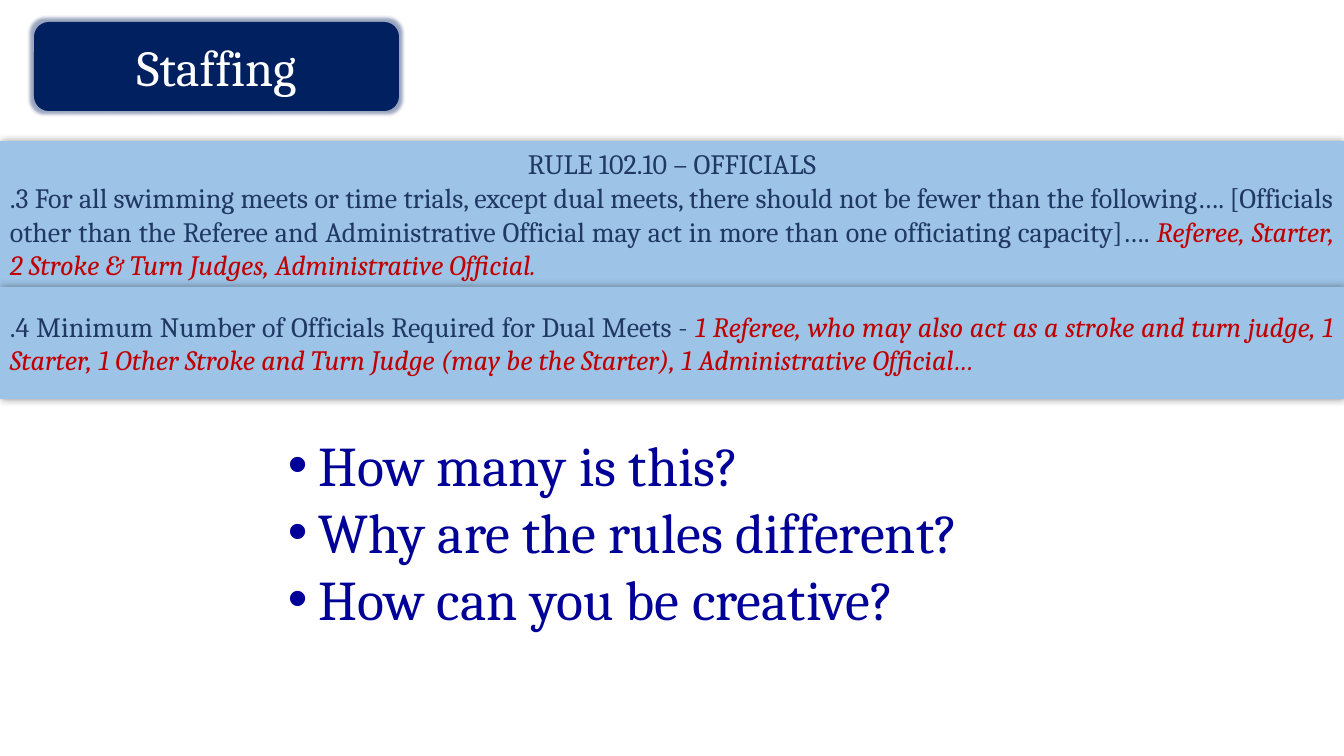
from lxml import etree
from pptx import Presentation
from pptx.dml.color import RGBColor
from pptx.enum.shapes import MSO_SHAPE
from pptx.enum.text import MSO_ANCHOR, MSO_AUTO_SIZE, PP_ALIGN
from pptx.oxml.ns import qn
from pptx.util import Emu, Pt

RECT, ROUND = MSO_SHAPE.RECTANGLE, MSO_SHAPE.ROUNDED_RECTANGLE
LEFT, CENTER, JUSTIFY = PP_ALIGN.LEFT, PP_ALIGN.CENTER, PP_ALIGN.JUSTIFY
MIDDLE, FIXED = MSO_ANCHOR.MIDDLE, MSO_AUTO_SIZE.NONE
PX = 914400 / 100.8
NAVY, BLUE, INK, RED = "002060", "9DC3E6", "203864", "C00000"


def px(*vals):
    return [Emu(round(v * PX)) for v in vals]


def write(shape, paras, size, color, bullet=False):
    """Fill a shape with (align, text, red italic text) paragraphs."""
    frame = shape.text_frame
    frame.word_wrap = True
    frame.auto_size = FIXED
    frame.vertical_anchor = MIDDLE
    for i, (align, *parts) in enumerate(paras):
        para = frame.add_paragraph() if i else frame.paragraphs[0]
        para.alignment = align
        if bullet:
            props = para._p.get_or_add_pPr()
            indent = px(31)[0]
            props.set("marL", str(indent))
            props.set("indent", str(-indent))
            etree.SubElement(props, qn("a:buFont"), typeface="Arial")
            etree.SubElement(props, qn("a:buChar"), char="•")
        for k, text in enumerate(parts):
            run = para.add_run()
            run.text = text
            run.font.name = "Cambria"
            run.font.size = Pt(size)
            run.font.italic = k > 0
            run.font.color.rgb = RGBColor.from_string(RED if k else color)


prs = Presentation()
prs.slide_width, prs.slide_height = px(1344, 756)
slide = prs.slides.add_slide(prs.slide_layouts[5])
shapes = slide.shapes

# Panels: kind, place, fill, effect, its attributes, effect colour, paragraphs
shade = ("outerShdw", {"blurRad": str(Pt(5)), "dist": "0", "algn": "ctr", "rotWithShape": "0"}, "000000")
glow = ("glow", {"rad": str(Pt(5))}, NAVY)
rule3 = [
    (CENTER, "RULE 102.10 – OFFICIALS"),
    (JUSTIFY,
     ".3 For all swimming meets or time trials, except dual meets, there should not be fewer "
     "than the following…. [Officials other than the Referee and Administrative Official may "
     "act in more than one officiating capacity]…. ",
     "Referee, Starter, 2 Stroke & Turn Judges, Administrative Official."),
]
rule4 = [
    (JUSTIFY,
     ".4 Minimum Number of Officials Required for Dual Meets - ",
     "1 Referee, who may also act as a stroke and turn judge, 1 Starter, 1 Other Stroke and "
     "Turn Judge (may be the Starter), 1 Administrative Official…"),
]
panels = [
    (RECT, (0, 141, 1344, 146), BLUE, shade, rule3),
    (ROUND, (34, 22, 365, 89), NAVY, glow, []),
    (RECT, (0, 287, 1344, 112), BLUE, shade, rule4),
]
for kind, place, fill, (effect, attrs, tint), paras in panels:
    panel = shapes.add_shape(kind, *px(*place))
    panel.fill.solid()
    panel.fill.fore_color.rgb = RGBColor.from_string(fill)
    panel.line.fill.background()
    panel.shadow.inherit = False
    effects = panel._element.spPr.find(qn("a:effectLst"))
    node = etree.SubElement(effects, qn("a:" + effect), attrs)
    color = etree.SubElement(node, qn("a:srgbClr"), val=tint)
    etree.SubElement(color, qn("a:alpha"), val="40000")
    write(panel, paras, 20, INK)

# Title, brought in front of its panel
title = shapes.title
title.left, title.top, title.width, title.height = px(34, 22, 365, 89)
write(title, [(CENTER, "Staffing")], 36, "FFFFFF")
shapes._spTree.append(title._element)

asks = ["How many is this?", "Why are the rules different?", "How can you be creative?"]
box = shapes.add_textbox(*px(278, 424, 787, 214))
write(box, [(LEFT, ask) for ask in asks], 40, "000099", bullet=True)

prs.save("out.pptx")
